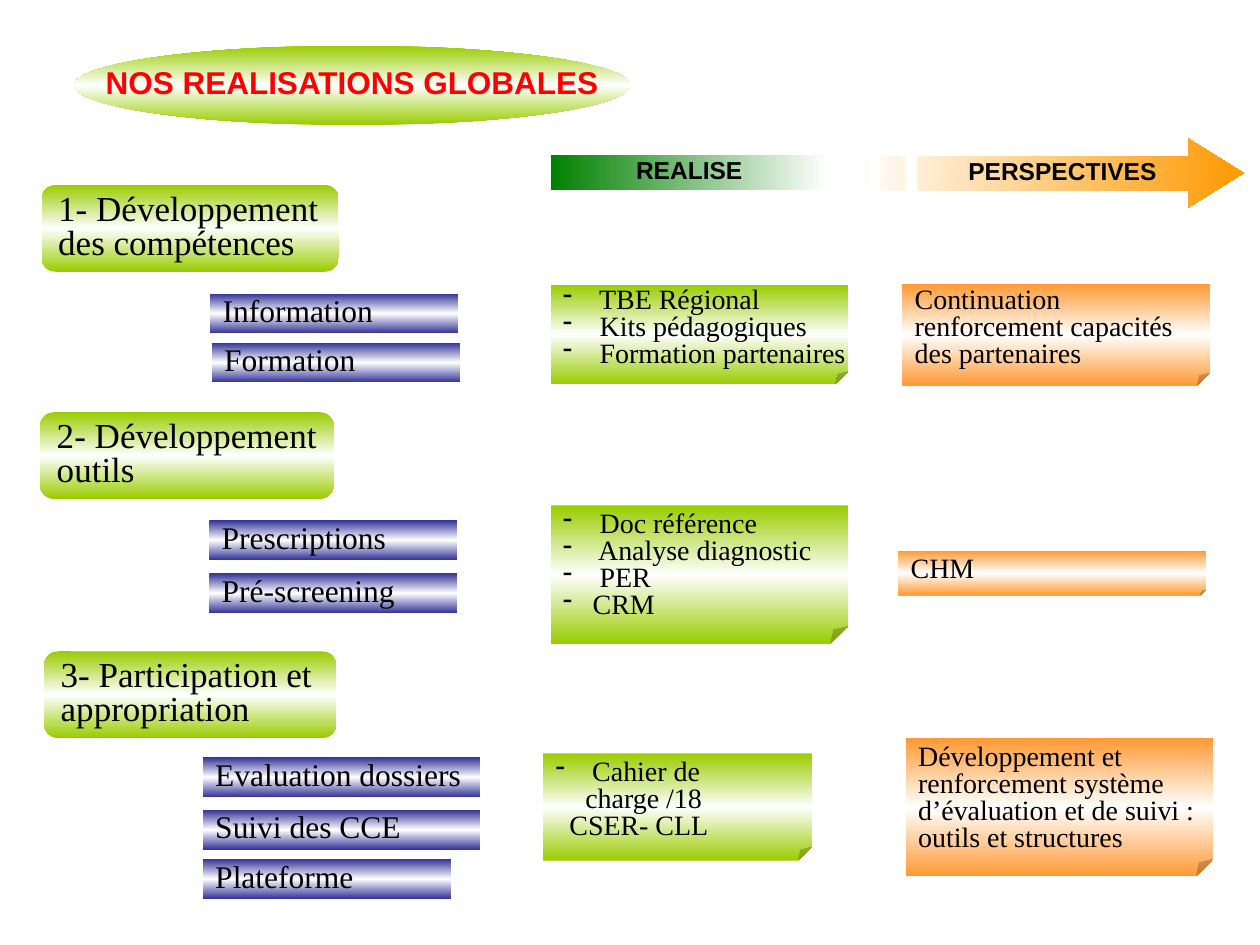
from lxml.etree import SubElement
from pptx import Presentation
from pptx.dml.color import RGBColor
from pptx.enum.shapes import MSO_SHAPE
from pptx.enum.text import MSO_ANCHOR, MSO_AUTO_SIZE, PP_ALIGN
from pptx.oxml.ns import qn
from pptx.util import Cm, Pt

GREEN, BLUE, ORANGE = "99CC00", "333399", "FF9933"
WHITE, BLACK, RED = "FFFFFF", "000000", "FF0000"

THEME = {"size": Pt(20), "name": "Times New Roman"}
TAG = {"size": Pt(18), "name": "Times New Roman"}
NOTE = {"size": Pt(16), "name": "Times New Roman"}
TITLE = {"size": Pt(18), "name": "Arial", "bold": True}
AXIS = {"size": Pt(14), "name": "Arial", "bold": True}

TAG_HEIGHT = 0.8
BULLET_INDENT = 0.6

SECTIONS = [
    {
        "box": (0.84, 3.73, 5.99, 1.75),
        "theme": "1- Développement des compétences",
        "tags": [("Information", 3.4, 2.19, 5), ("Formation", 3.43, 3.18, 5)],
        "achieved": (10.26, 2.01, 5.99, 2.01),
        "achievements": [" TBE Régional", " Kits pédagogiques", " Formation partenaires"],
        "wrap": False,
        "planned": (17.35, 1.99, 6.2, 2.06),
        "plan": "Continuation renforcement capacités des partenaires",
    },
    {
        "box": (0.81, 8.31, 5.92, 1.75),
        "theme": "2- Développement outils",
        "tags": [("Prescriptions", 3.41, 2.18, 5), ("Pré-screening", 3.41, 3.25, 5)],
        "achieved": (10.29, 1.88, 5.99, 2.79),
        "achievements": [" Doc référence", " Analyse diagnostic", " PER", "CRM"],
        "planned": (17.3, 2.79, 6.2, 0.91),
        "plan": "CHM",
    },
    {
        "box": (0.89, 13.13, 5.89, 1.75),
        "theme": "3- Participation et appropriation",
        "tags": [
            ("Evaluation dossiers", 3.2, 2.14, 5.59),
            ("Suivi des CCE", 3.2, 3.2, 5.59),
            ("Plateforme", 3.2, 4.19, 5),
        ],
        "achieved": (10.06, 2.06, 5.41, 2.16),
        "achievements": [" Cahier de charge /18"],
        "closing": "CSER- CLL",
        "planned": (17.37, 1.75, 6.2, 2.79),
        "plan": "Développement et renforcement système d’évaluation et de suivi : outils et structures",
    },
]


def color(value):
    return RGBColor.from_string(value)


def paint(shape, stops, angle):
    shape.shadow.inherit = False
    shape.line.fill.background()
    shape.fill.gradient()
    shape.fill.gradient_angle = angle
    stop_list = shape._element.spPr.find(qn("a:gradFill")).find(qn("a:gsLst"))
    for stop in list(stop_list):
        stop_list.remove(stop)
    for index, value in enumerate(stops):
        position = 100000 * index // (len(stops) - 1)
        stop = SubElement(stop_list, qn("a:gs"), pos=str(position))
        SubElement(stop, qn("a:srgbClr"), val=value)


def write(shape, lines, style, text_color=BLACK, align=PP_ALIGN.LEFT, wrap=True):
    frame = shape.text_frame
    frame.word_wrap = wrap
    frame.auto_size = MSO_AUTO_SIZE.SHAPE_TO_FIT_TEXT if wrap else MSO_AUTO_SIZE.NONE
    frame.vertical_anchor = MSO_ANCHOR.MIDDLE
    for index, line in enumerate(lines):
        paragraph = frame.add_paragraph() if index else frame.paragraphs[0]
        paragraph.alignment = align
        paragraph.line_spacing = 0.8
        run = paragraph.add_run()
        run.text = line
        run.font.color.rgb = color(text_color)
        for name, value in style.items():
            setattr(run.font, name, value)


def add_panel(slide, kind, box, stops, angle=90):
    panel = slide.shapes.add_shape(kind, *map(Cm, box))
    paint(panel, stops, angle)
    return panel


def add_note(slide, box, edge):
    note = add_panel(slide, MSO_SHAPE.FOLDED_CORNER, box, mirrored(edge))
    guides = note._element.spPr.find(qn("a:prstGeom")).get_or_add_avLst()
    for guide in list(guides):
        guides.remove(guide)
    SubElement(guides, qn("a:gd"), name="adj", fmla="val 12500")
    return note


def mirrored(edge):
    return [edge, WHITE, edge]


def indent(paragraph, left, first):
    properties = paragraph._p.get_or_add_pPr()
    properties.set("marL", str(Cm(left)))
    properties.set("indent", str(Cm(first)))
    return properties


def add_title(slide, box):
    title = add_panel(slide, MSO_SHAPE.OVAL, box, mirrored(GREEN))
    write(title, ["NOS REALISATIONS GLOBALES"], TITLE, RED, PP_ALIGN.CENTER, False)


def add_timeline(slide, left, top):
    done = add_panel(slide, MSO_SHAPE.RECTANGLE, (left, top + 0.33, 5.59, 0.71),
                     ["008000", WHITE], 0)
    write(done, ["REALISE"], AXIS, BLACK, PP_ALIGN.CENTER, False)

    upper, lower = 0.36, 1.06
    head, tip = 12.85, 13.97
    outlines = [[(head, 0), (head, upper), (7.39, upper), (7.39, lower),
                 (head, lower), (head, 1.4), (tip, 0.7)]]
    for start, end in [(6.65, 7.14), (6.17, 6.43)]:
        outlines.append([(start, upper), (start, lower), (end, lower), (end, upper)])

    builder = None
    for outline in outlines:
        points = [(Cm(left + x), Cm(top + y)) for x, y in outline]
        if builder is None:
            builder = slide.shapes.build_freeform(*points[0])
        else:
            builder.move_to(*points[0])
        builder.add_line_segments(points[1:], close=True)
    arrow = builder.convert_to_shape()
    paint(arrow, [WHITE, "FF9900"], 0)
    write(arrow, ["PERSPECTIVES"], AXIS, BLACK, PP_ALIGN.CENTER, False)
    arrow.text_frame.margin_left = Cm(0.75)


def add_section(slide, section):
    left, top = section["box"][:2]

    def place(x, y, width, height):
        return left + x, top + y, width, height

    theme = add_panel(slide, MSO_SHAPE.ROUNDED_RECTANGLE, section["box"], mirrored(GREEN))
    write(theme, [section["theme"]], THEME)

    for label, x, y, width in section["tags"]:
        tag = add_panel(slide, MSO_SHAPE.RECTANGLE, place(x, y, width, TAG_HEIGHT),
                        mirrored(BLUE))
        write(tag, [label], TAG, wrap=False)

    achieved = add_note(slide, place(*section["achieved"]), GREEN)
    achievements = section["achievements"]
    closing = [section["closing"]] if "closing" in section else []
    write(achieved, achievements + closing, NOTE, wrap=section.get("wrap", True))
    paragraphs = achieved.text_frame.paragraphs
    for paragraph in paragraphs[:len(achievements)]:
        properties = indent(paragraph, BULLET_INDENT, -BULLET_INDENT)
        SubElement(properties, qn("a:buChar"), char="-")
    for paragraph in paragraphs[len(achievements):]:
        indent(paragraph, 0, 0.28)

    planned = add_note(slide, place(*section["planned"]), ORANGE)
    write(planned, [section["plan"]], NOTE)


def main():
    presentation = Presentation()
    presentation.slide_width, presentation.slide_height = Cm(25.4), Cm(19.05)
    slide = presentation.slides.add_slide(presentation.slide_layouts[6])
    add_title(slide, (1.5, 0.92, 11.2, 1.6))
    add_timeline(slide, 11.1, 2.79)
    for section in SECTIONS:
        add_section(slide, section)
    presentation.save("out.pptx")


if __name__ == "__main__":
    main()
